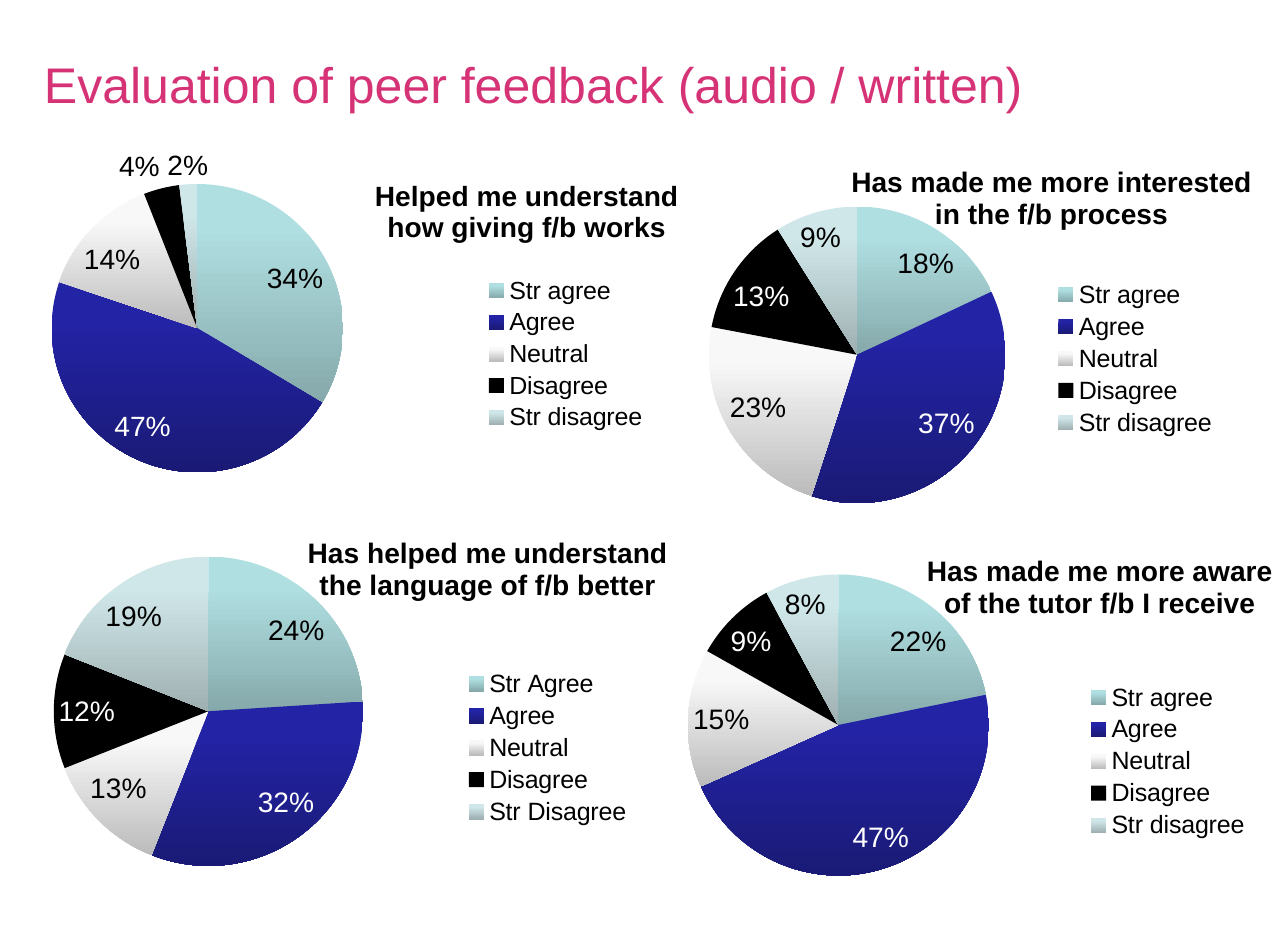
from dataclasses import dataclass

from lxml.etree import SubElement
from pptx import Presentation
from pptx.chart.data import CategoryChartData
from pptx.dml.color import RGBColor
from pptx.enum.chart import XL_CHART_TYPE as ChartType, XL_LEGEND_POSITION as LegendPosition
from pptx.enum.text import MSO_ANCHOR as Anchor, PP_ALIGN as Align
from pptx.oxml.ns import qn
from pptx.util import Inches, Pt

PINK = RGBColor(0xD6, 0x33, 0x77)
BLACK = RGBColor(0x00, 0x00, 0x00)
WHITE = RGBColor(0xFF, 0xFF, 0xFF)
# Top and bottom colour of each slice, in answer order
SLICE_SHADES = [
    (RGBColor(0xB0, 0xDF, 0xE1), RGBColor(0x86, 0xA9, 0xAB)),
    (RGBColor(0x23, 0x23, 0xA5), RGBColor(0x1A, 0x1A, 0x76)),
    (RGBColor(0xF8, 0xF8, 0xF8), RGBColor(0xBC, 0xBC, 0xBC)),
    (BLACK, BLACK),
    (RGBColor(0xD0, 0xE7, 0xE9), RGBColor(0x9F, 0xB0, 0xB2)),
]
FONT = "Arial"
ANSWERS = ["Str agree", "Agree", "Neutral", "Disagree", "Str disagree"]


@dataclass
class Question:
    lines: list
    values: list
    frame: tuple  # left, top, width, height in inches
    plot: tuple  # x, y, width, height as shares of the frame
    title_at: tuple  # inches on the slide
    legend_at: tuple  # inches on the slide
    white_labels: tuple = (1, 3)
    answers: tuple = tuple(ANSWERS)


QUESTIONS = [
    Question(["Helped me understand", "how giving f/b works"], [34, 47, 14, 4, 2],
             (0.21, 1.3, 6.06, 3.07), (0.041, 0.1, 0.427, 0.843),
             (3.3, 1.53), (4.27, 2.4), white_labels=(1,)),
    Question(["Has helped me understand", "the language of f/b better"], [24, 32, 13, 12, 19],
             (0.29, 4.69, 5.69, 3.32), (0.033, 0.076, 0.483, 0.829),
             (2.7, 4.73), (4.09, 5.91),
             answers=("Str Agree", "Agree", "Neutral", "Disagree", "Str Disagree")),
    Question(["Has made me more aware", "of the tutor f/b I receive"], [22, 47, 15, 9, 8],
             (5.97, 4.84, 5.47, 3.25), (0.025, 0.081, 0.49, 0.823),
             (8.2, 4.89), (9.62, 6.03)),
    Question(["Has made me more interested", "in the f/b process"], [18, 37, 23, 13, 9],
             (5.64, 1.33, 5.53, 3.14), (0.118, 0.161, 0.478, 0.839),
             (7.53, 1.43), (9.33, 2.45)),
]


def set_font(font, size, color=BLACK, bold=False):
    font.name, font.size, font.bold = FONT, Pt(size), bold
    font.color.rgb = color


def place(part, index, **settings):
    """Give a chart part a manual layout as its child at index."""
    for old in part.findall(qn("c:layout")):
        part.remove(old)
    layout = part.makeelement(qn("c:layout"))
    part.insert(index, layout)
    manual = SubElement(layout, qn("c:manualLayout"))
    for name, value in settings.items():
        SubElement(manual, qn(f"c:{name}")).set("val", str(value))


def place_corner(part, corner, frame):
    left, top, width, height = frame
    place(part, 1, xMode="edge", yMode="edge",
          x=round((corner[0] - left) / width, 3), y=round((corner[1] - top) / height, 3))


def add_heading(slide, text):
    title = slide.shapes.title
    title.left, title.top = Inches(0.29), Inches(0.43)
    title.width, title.height = Inches(10.29), Inches(0.63)
    title.text_frame.vertical_anchor = Anchor.MIDDLE
    paragraph = title.text_frame.paragraphs[0]
    paragraph.alignment = Align.LEFT
    run = paragraph.add_run()
    run.text = text
    set_font(run.font, 32, PINK)


def add_chart_title(chart, lines):
    chart.has_title = True
    frame = chart.chart_title.text_frame
    for number, line in enumerate(lines):
        paragraph = frame.add_paragraph() if number else frame.paragraphs[0]
        paragraph.alignment = Align.CENTER
        run = paragraph.add_run()
        run.text = line
        set_font(run.font, 18, bold=True)
    chart.chart_title.include_in_layout = False


def paint_slices(series):
    for index, (top_color, bottom_color) in enumerate(SLICE_SHADES):
        point_format = series.points[index].format
        point_format.line.fill.background()
        fill = point_format.fill
        if top_color == bottom_color:
            fill.solid()
            fill.fore_color.rgb = top_color
            continue
        fill.gradient()
        fill.gradient_angle = 270
        first, last = fill.gradient_stops
        first.color.rgb, first.position = top_color, 0.2
        last.color.rgb, last.position = bottom_color, 1


def label_slices(series, white_labels):
    labels = series.data_labels
    labels.show_percentage, labels.show_value = True, False
    labels.number_format, labels.number_format_is_linked = "0%", False
    set_font(labels.font, 18)
    for index in white_labels:
        set_font(series.points[index].data_label.font, 18, WHITE)
    for label in labels._element.findall(qn("c:dLbl")):
        label.find(qn("c:showVal")).set("val", "0")
        label.find(qn("c:showPercent")).set("val", "1")


def add_pie(slide, question):
    data = CategoryChartData()
    data.categories = question.answers
    data.add_series("Series 1", question.values)
    box = [Inches(length) for length in question.frame]
    chart = slide.shapes.add_chart(ChartType.PIE, *box, data).chart
    set_font(chart.font, 18)
    add_chart_title(chart, question.lines)
    chart.has_legend = True
    chart.legend.position = LegendPosition.RIGHT
    chart.legend.include_in_layout = False
    set_font(chart.legend.font, 16)
    chart.plots[0].vary_by_categories = True
    series = chart.plots[0].series[0]
    paint_slices(series)
    label_slices(series, question.white_labels)

    chart_element = chart._chartSpace.chart
    place_corner(chart_element.find(qn("c:title")), question.title_at, question.frame)
    place_corner(chart_element.find(qn("c:legend")), question.legend_at, question.frame)
    x, y, width, height = question.plot
    place(chart_element.plotArea, 0, layoutTarget="inner", xMode="edge", yMode="edge",
          x=x, y=y, w=width, h=height)


def main():
    presentation = Presentation()
    presentation.slide_width, presentation.slide_height = Inches(11.44), Inches(8.27)
    slide = presentation.slides.add_slide(presentation.slide_layouts[5])
    add_heading(slide, "Evaluation of peer feedback (audio / written)")
    for question in QUESTIONS:
        add_pie(slide, question)
    presentation.save("out.pptx")


if __name__ == "__main__":
    main()
